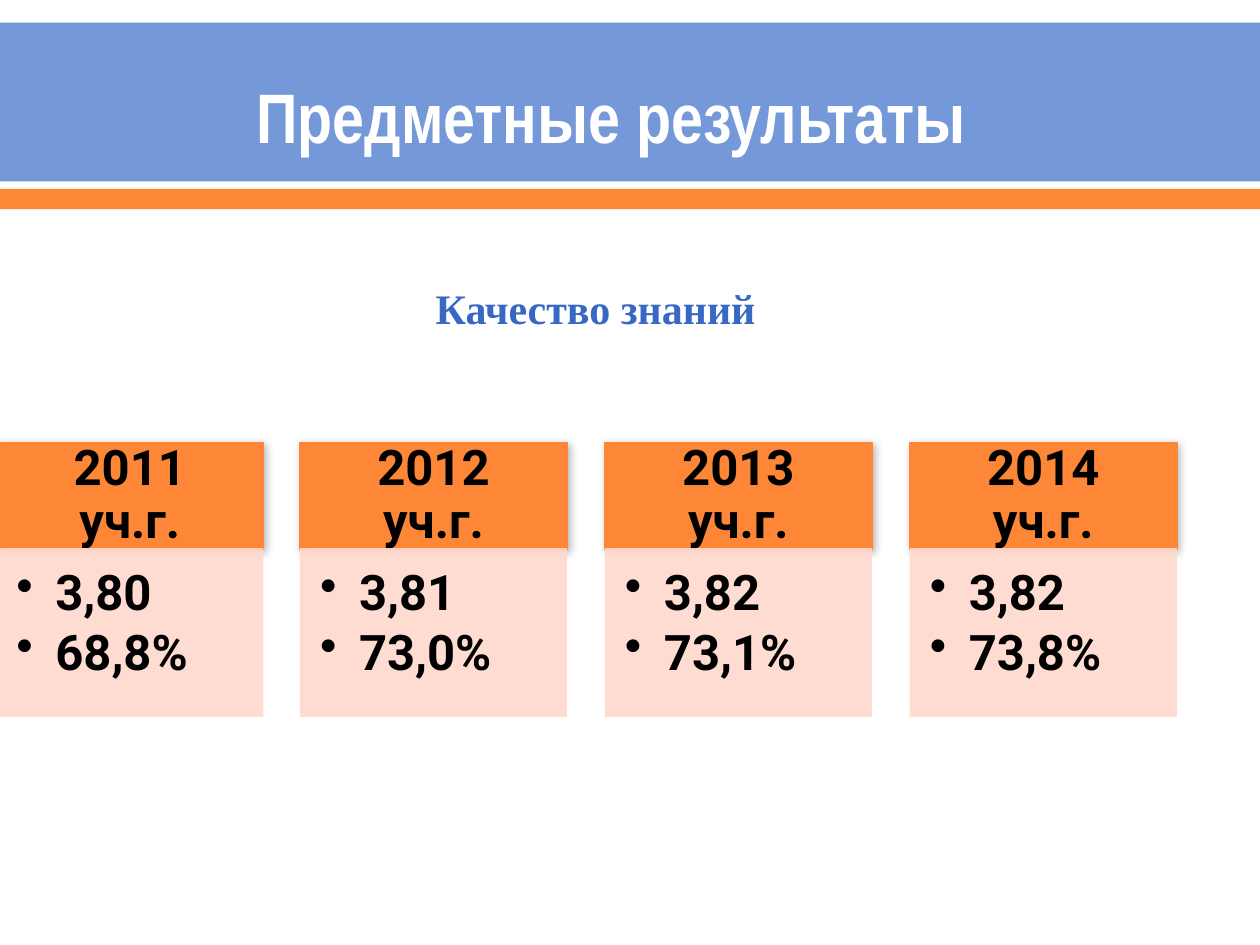
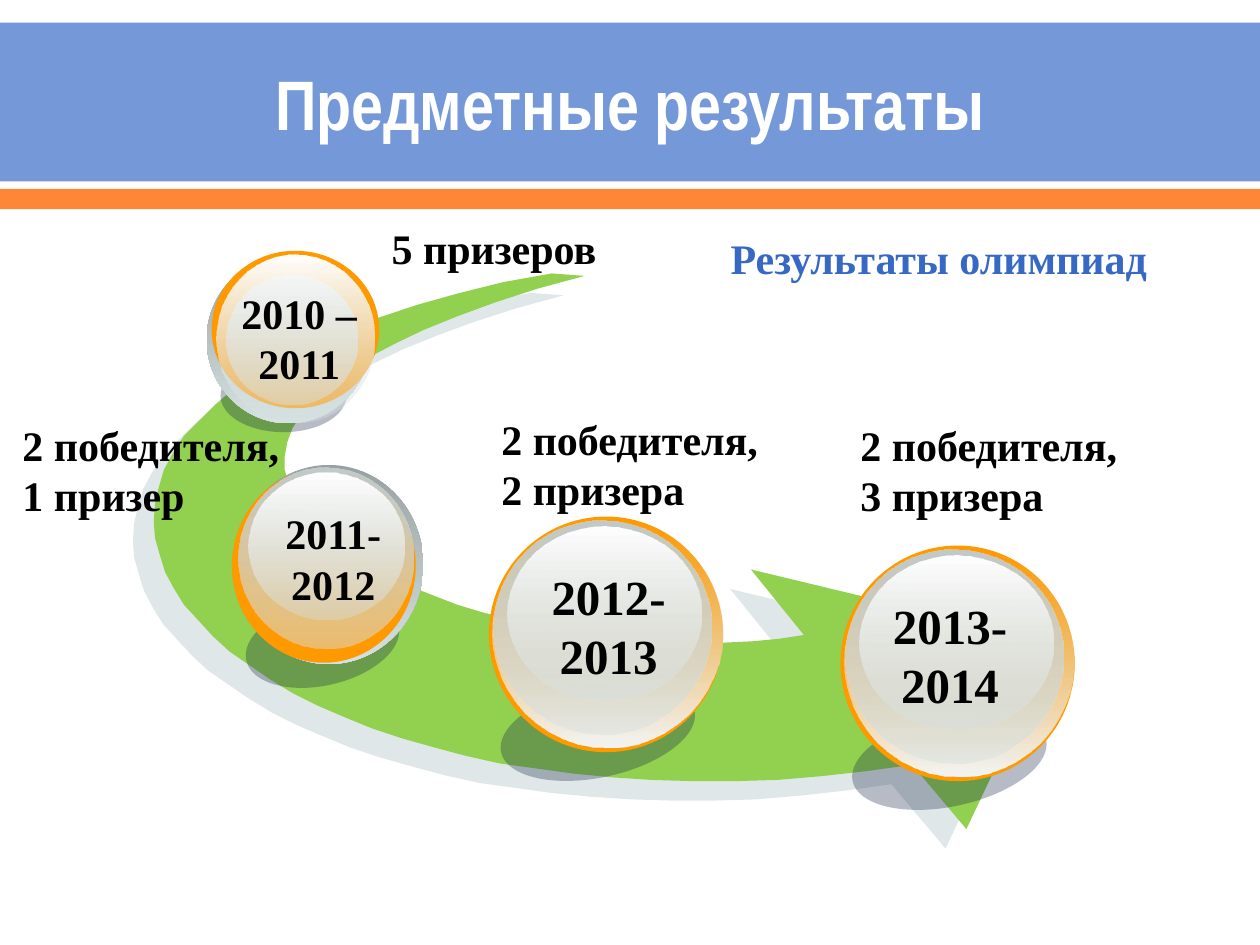
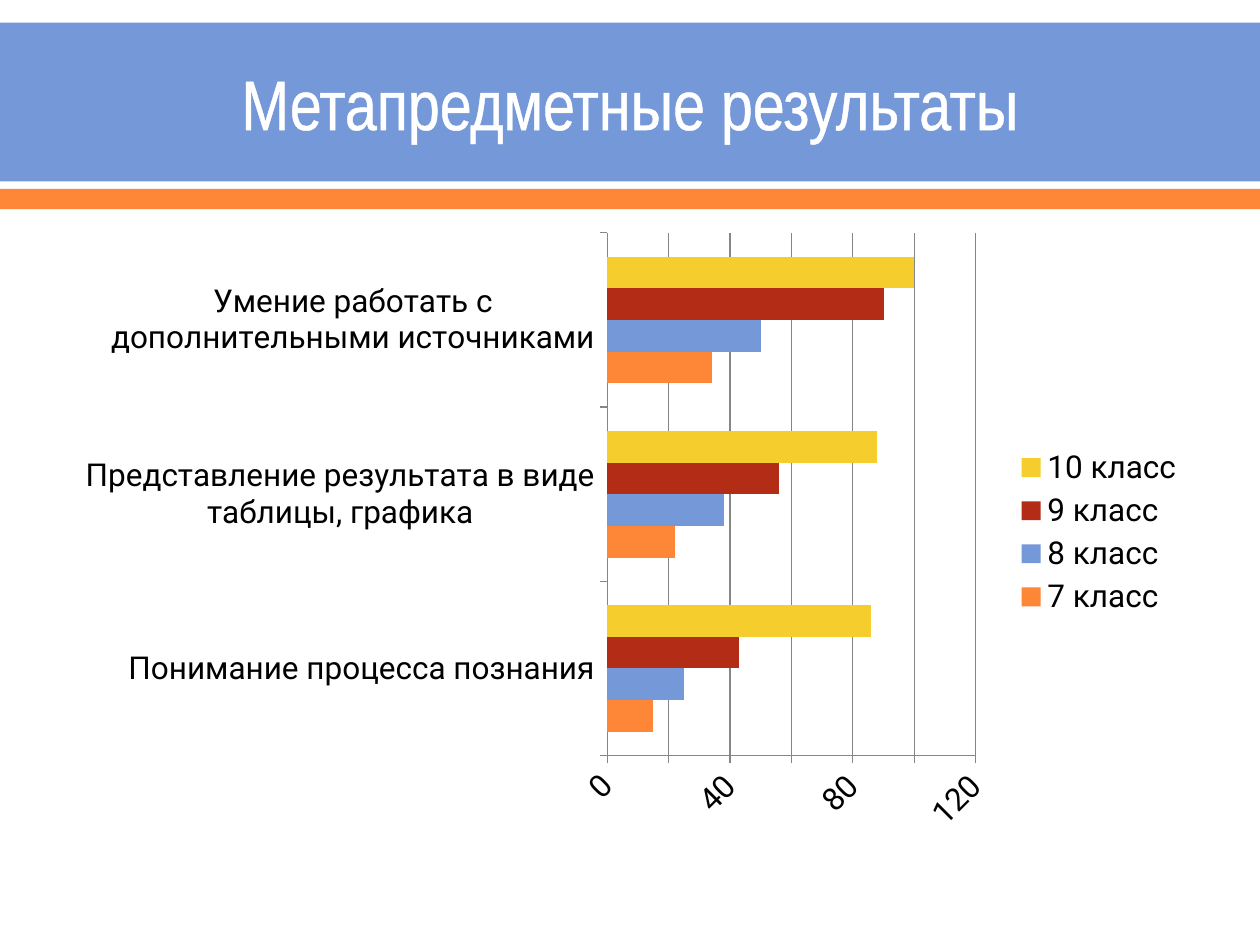
from lxml import etree
from pptx import Presentation
from pptx.chart.data import CategoryChartData
from pptx.dml.color import RGBColor
from pptx.enum.chart import XL_CHART_TYPE as ChartType, XL_LEGEND_POSITION as LegendPos, XL_TICK_MARK as Tick
from pptx.enum.shapes import MSO_SHAPE as Shape
from pptx.enum.text import MSO_ANCHOR as Anchor, PP_ALIGN as Align
from pptx.oxml.ns import qn
from pptx.util import Pt

PX = 9144  # 100 px to the inch
COLORS = {
    "band": "7598D9", "accent": "FE8637", "white": "FFFFFF", "black": "000000",
    "heading": "3668C4", "card": "FFD9CE", "arrow": "92D050", "arrow_shadow": "C1D1D3",
    "ball_shadow": "0F2145", "ring": "FF9900", "steel": "99A1A2", "grey": "C1CBCC",
    "mist": "D6E1E2", "pale": "F2F5F5", "red": "B32C16", "yellow": "F5CD2D", "grid": "868686",
}
TITLE_FONT, BODY_FONT, SERIF = "Arial Narrow", "Roboto", "Times New Roman"

# Gradients run from top to bottom: (colour, opacity in percent) twice.
RIM = (("mist", 0), ("pale", 100))
EDGE = (("steel", 100), ("mist", 100))
BODY = (("grey", 100), ("mist", 48))
GLOSS = (("white", 100), ("mist", 38))
SHADE = (("ball_shadow", 30),)
RING = (("ring", 100),)

# Layers of a ball, back to front: (x, y, width, height), fill, rotation.
LARGE_BALL = [
    ((8, 134, 157, 73), SHADE, 347.9), ((0, 0, 186, 187), RING, 0),
    ((3, 1, 182, 182), RIM, 0), ((4, 3, 173, 170), BODY, 0), ((15, 8, 154, 138), GLOSS, 0),
]
MEDIUM_BALL = [
    ((10, 108, 124, 67), SHADE, 347.1), ((2, 0, 150, 158), EDGE, 0),
    ((0, 3, 146, 154), RING, 0), ((5, 2, 139, 144), BODY, 0), ((13, 6, 124, 117), GLOSS, 0),
]
SMALL_BALL = [
    ((11, 86, 100, 58), SHADE, 0), ((0, 4, 130, 133), EDGE, 0),
    ((4, 0, 133, 125), RING, 0), ((16, 20, 104, 102), BODY, 0), ((8, 3, 125, 133), GLOSS, 0),
]

ARROW_OUTER = [
    (316, 0), (277, 7), (241, 16), (209, 25), (179, 35), (151, 45), (125, 56), (103, 67),
    (82, 79), (64, 91), (49, 104), (36, 117), (24, 129), (15, 143), (8, 156), (4, 170),
    (1, 183), (0, 197), (1, 210), (5, 224), (9, 237), (16, 250), (24, 263), (35, 275),
    (47, 288), (60, 300), (76, 311), (92, 322), (110, 333), (130, 343), (151, 352),
    (173, 361), (197, 369), (222, 376), (248, 383), (275, 389), (304, 393), (333, 397),
    (364, 400), (395, 402), (428, 403), (461, 403), (495, 402), (530, 399), (566, 395),
    (602, 390),
]
ARROW_HEAD = [(645, 441), (715, 293), (474, 235)]
ARROW_INNER = [
    (516, 287), (496, 290), (475, 292), (454, 293), (432, 294), (410, 293), (388, 292),
    (366, 290), (344, 287), (323, 284), (301, 279), (281, 274), (261, 269), (241, 263),
    (223, 256), (205, 249), (189, 242), (173, 234), (159, 225), (147, 216), (135, 207),
    (125, 197), (117, 187), (111, 177), (107, 167), (104, 156), (104, 145), (106, 134),
    (110, 123), (117, 112), (126, 101), (138, 89), (153, 78), (170, 67), (191, 56),
    (214, 45), (241, 34), (271, 23), (305, 12), (342, 2),
]


def rgb(color):
    return RGBColor.from_string(COLORS[color])


def emu(*lengths):
    return [length * PX for length in lengths]


def paint(shape, stops):
    """Fill with one colour or a vertical gradient, without line or shadow."""
    shape.shadow.inherit = False
    if len(stops) == 1:
        shape.fill.solid()
        shape.fill.fore_color.rgb = rgb(stops[0][0])
    else:
        shape.fill.gradient()
        shape.fill.gradient_angle = 270
        for stop, (color, _) in zip(shape.fill.gradient_stops, stops):
            stop.color.rgb = rgb(color)
    for node, (_, opacity) in zip(shape._element.spPr.iter(qn("a:srgbClr")), stops):
        if opacity < 100:
            etree.SubElement(node, qn("a:alpha"), val=str(opacity * 1000))
    shape.line.fill.background()


def add_filled(slide, kind, box, stops):
    shape = slide.shapes.add_shape(kind, *emu(*box))
    paint(shape, stops)
    return shape


def cast_shadow(shape, color, opacity, blur, distance, angle):
    effects = shape._element.spPr.find(qn("a:effectLst"))
    outer = etree.SubElement(
        effects, qn("a:outerShdw"), blurRad=str(Pt(blur)), dist=str(Pt(distance)),
        dir=str(angle * 60000), algn="ctr", rotWithShape="0")
    node = etree.SubElement(outer, qn("a:srgbClr"), val=COLORS[color])
    etree.SubElement(node, qn("a:alpha"), val=str(opacity * 1000))


def write(frame, lines, size, font, color="black", bold=True, align=Align.LEFT):
    """Write one paragraph for each line and return the paragraphs."""
    for index, line in enumerate(lines):
        paragraph = frame.add_paragraph() if index else frame.paragraphs[0]
        paragraph.alignment = align
        run = paragraph.add_run()
        run.text = line
        run.font.size, run.font.name, run.font.bold = Pt(size), font, bold
        run.font.color.rgb = rgb(color)
    return frame.paragraphs


def add_text(slide, box, lines, size=24, font=SERIF, wrap=True, anchor=Anchor.TOP, **style):
    frame = slide.shapes.add_textbox(*emu(*box)).text_frame
    frame.word_wrap, frame.vertical_anchor = wrap, anchor
    return write(frame, lines, size, font, **style)


def set_margins(frame, left, top, right, bottom):
    frame.margin_left, frame.margin_top, frame.margin_right, frame.margin_bottom = emu(
        left, top, right, bottom)


def start_slide(deck, title, box=(50, 20, 900, 122), bold=True):
    """Add a blank slide with both bands and the title."""
    slide = deck.slides.add_slide(deck.slide_layouts[6])
    add_filled(slide, Shape.RECTANGLE, (0, 18, 1000, 126), (("band", 100),))
    add_filled(slide, Shape.RECTANGLE, (0, 150, 1000, 16), (("accent", 100),))
    heading = add_text(slide, box, [title], 40, TITLE_FONT, color="white", bold=bold,
                       anchor=Anchor.MIDDLE, align=Align.CENTER)
    return slide, heading[0].runs[0]


def add_year_card(slide, box, year, results):
    left, top, width, height = box
    header_height = 85
    header = add_filled(slide, Shape.RECTANGLE, (left, top, width, header_height),
                        (("accent", 100),))
    header.line.color.rgb = rgb("accent")
    header.line.width = Pt(0.79)
    cast_shadow(header, "black", 30, 5, 2, 60)
    header.text_frame.vertical_anchor = Anchor.MIDDLE
    set_margins(header.text_frame, 22, 12, 22, 12)
    write(header.text_frame, [year], 28, BODY_FONT, align=Align.CENTER)[0].line_spacing = 0.9

    card = add_filled(
        slide, Shape.RECTANGLE, (left, top + header_height - 1, width, height - header_height + 1),
        (("card", 90),))
    card.text_frame.vertical_anchor = Anchor.TOP
    set_margins(card.text_frame, 16, 16, 22, 24)
    for result in write(card.text_frame, results, 28, BODY_FONT):
        result.line_spacing, result.space_after = 0.9, Pt(4)
        properties = result._p.get_or_add_pPr()
        properties.set("marL", str(31 * PX))
        properties.set("indent", str(-31 * PX))
        etree.SubElement(properties, qn("a:buChar"), char="•")


def add_ball(slide, origin, layers, label_box, years, size=24):
    left, top = origin
    for (x, y, width, height), stops, rotation in layers:
        layer = add_filled(slide, Shape.OVAL, (left + x, top + y, width, height), stops)
        layer.rotation = rotation
    x, y, width, height = label_box
    add_text(slide, (left + x, top + y, width, height), years, size, wrap=False,
             align=Align.CENTER)


def add_curved_arrow(slide, left, top):
    outline = ARROW_OUTER + ARROW_HEAD + ARROW_INNER
    builder = slide.shapes.build_freeform(*outline[0], scale=PX)
    builder.add_line_segments(outline[1:], close=True)
    arrow = builder.convert_to_shape(*emu(left, top))
    paint(arrow, (("arrow", 100),))
    cast_shadow(arrow, "arrow_shadow", 50, 0, 16.3, 137)


def add_skills_chart(slide, box):
    data = CategoryChartData()
    data.categories = ["Понимание процесса познания",
                       "Представление результата в виде таблицы, графика",
                       "Умение работать с дополнительными источниками"]
    grades = [("7 класс", (15, 22, 34), "accent"), ("8 класс", (25, 38, 50), "band"),
              ("9 класс", (43, 56, 90), "red"), ("10 класс", (86, 88, 100), "yellow")]
    for name, scores, _ in grades:
        data.add_series(name, scores)
    chart = slide.shapes.add_chart(ChartType.BAR_CLUSTERED, *emu(*box), data).chart
    chart.has_title = False
    chart.font.size, chart.font.name = Pt(18), BODY_FONT
    chart.font.color.rgb = rgb("black")
    chart.has_legend = True
    chart.legend.position = LegendPos.RIGHT
    chart.legend.include_in_layout = False

    plot = chart.plots[0]
    plot.gap_width, plot.vary_by_categories = 150, False
    for series, (_, _, color) in zip(plot.series, grades):
        series.format.fill.solid()
        series.format.fill.fore_color.rgb = rgb(color)

    scores_axis = chart.value_axis
    scores_axis.minimum_scale, scores_axis.maximum_scale, scores_axis.major_unit = 0, 120, 20
    scores_axis.has_major_gridlines = True
    scores_axis.tick_labels.font.size = Pt(18)
    scores_axis._element.txPr.bodyPr.set("rot", str(-45 * 60000))
    for axis in (chart.category_axis, scores_axis):
        axis.major_tick_mark = Tick.OUTSIDE
        axis.format.line.color.rgb = rgb("grid")
    scores_axis.major_gridlines.format.line.color.rgb = rgb("grid")


def build_quality_slide(deck):
    slide, _ = start_slide(deck, "Предметные результаты", (35, 60, 900, 63))
    cards = [("2011 уч.г.", ["3,80", "68,8%"]), ("2012 уч.г.", ["3,81", "73,0%"]),
             ("2013 уч.г.", ["3,82", "73,1%"]), ("2014 уч.г.", ["3,82", "73,8%"])]
    left, pitch = -3, 241.5
    for index, (year, results) in enumerate(cards):
        add_year_card(slide, (round(left + index * pitch), 351, 212, 218), year, results)
    add_text(slide, (336, 219, 277, 50), ["Качество знаний"], color="heading", wrap=False)


def build_olympiad_slide(deck):
    slide, _ = start_slide(deck, "Предметные результаты")
    add_curved_arrow(slide, 122, 217)
    add_ball(slide, (388, 410), LARGE_BALL, (39, 35, 112, 104), ["2012-", "2013"], 28)
    add_ball(slide, (184, 369), MEDIUM_BALL, (32, 29, 97, 91), ["2011-", "2012"])
    add_ball(slide, (164, 199), SMALL_BALL, (17, 24, 113, 91), ["2010 –", "2011"])
    add_ball(slide, (667, 433), LARGE_BALL, (31, 35, 112, 104), ["2013-", "2014"], 28)
    add_text(slide, (301, 172, 386, 50), ["5 призеров"])
    for left, top, prizes in [(8, 328, "1 призер"), (388, 323, "2 призера"),
                              (673, 328, "3 призера")]:
        add_text(slide, (left, top, 248, 91), ["2 победителя,", prizes])
    add_text(slide, (570, 180, 354, 50), ["Результаты олимпиад"], color="heading", wrap=False)


def build_skills_slide(deck):
    slide, title = start_slide(deck, "Метапредметные результаты", bold=False)
    outline = etree.Element(qn("a:ln"), w=str(Pt(1.1)))
    fill = etree.SubElement(outline, qn("a:solidFill"))
    etree.SubElement(fill, qn("a:srgbClr"), val=COLORS["white"])
    title._r.get_or_add_rPr().insert(0, outline)
    add_skills_chart(slide, (50, 175, 900, 495))


def main():
    deck = Presentation()
    deck.slide_width, deck.slide_height = emu(1000, 750)
    build_quality_slide(deck)
    build_olympiad_slide(deck)
    build_skills_slide(deck)
    deck.save("out.pptx")


if __name__ == "__main__":
    main()
